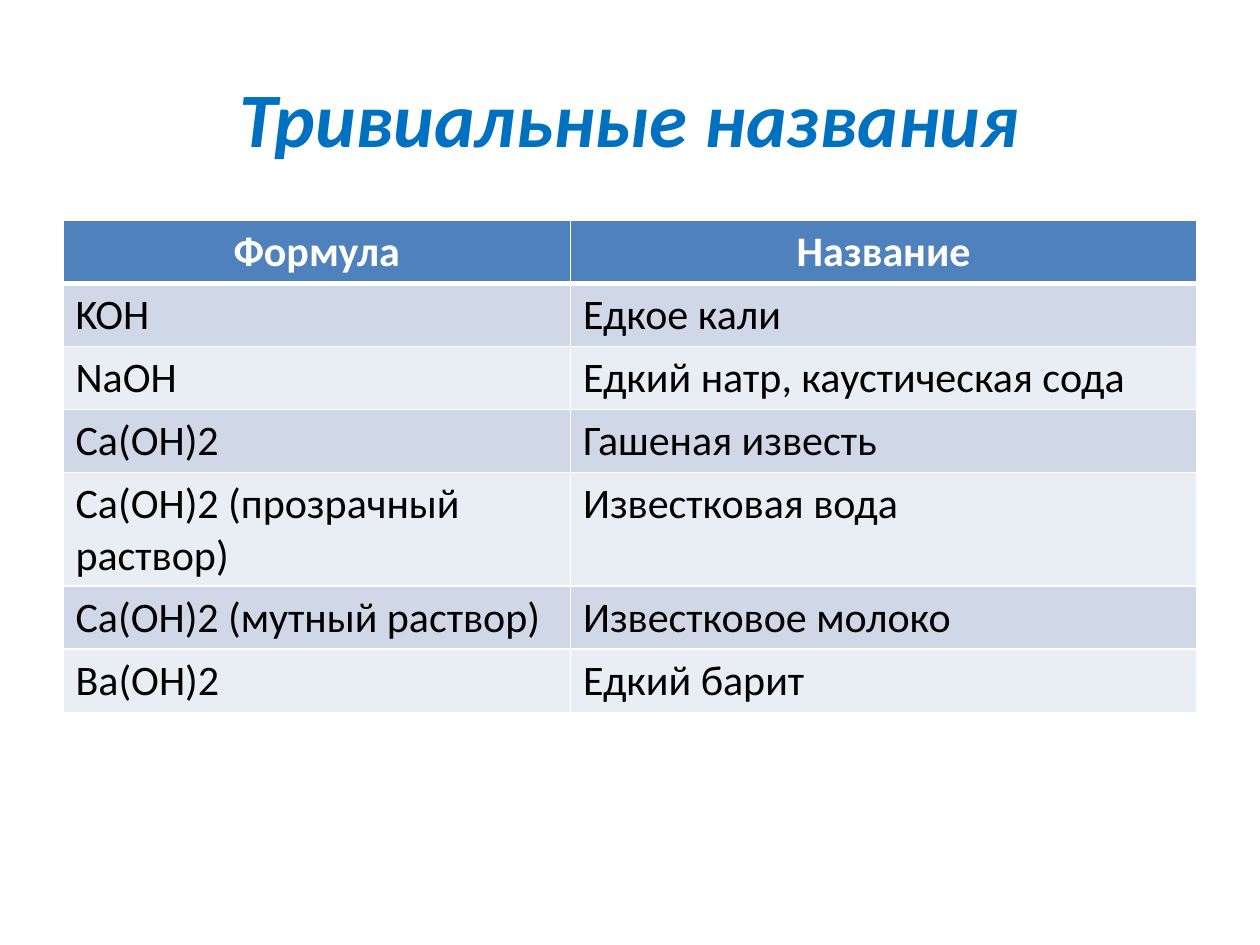
from typing import NamedTuple

from lxml.etree import SubElement
from pptx import Presentation
from pptx.dml.color import RGBColor as RGB
from pptx.enum.text import MSO_ANCHOR as ANCHOR, PP_ALIGN as ALIGN
from pptx.oxml.ns import qn
from pptx.util import Pt

FONT = "Calibri"
COLORS = {
    "title": "0070C0",
    "header": "4F81BD",
    "band_dark": "D0D8E8",
    "band_light": "E9EDF4",
    "text": "000000",
    "white": "FFFFFF",
}


class Compound(NamedTuple):
    formula: str
    name: str


HEADER = Compound("Формула", "Название")
COMPOUNDS = [
    Compound("KOH", "Едкое кали"),
    Compound("NaOH", "Едкий натр, каустическая сода"),
    Compound("Ca(OH)2", "Гашеная известь"),
    Compound("Ca(OH)2 (прозрачный раствор)", "Известковая вода"),
    Compound("Ca(OH)2 (мутный раствор)", "Известковое молоко"),
    Compound("Ba(OH)2", "Едкий барит"),
]
COL_WIDTHS = (290, 358)
ROW_HEIGHT = 29.2


def write(tf, text: str, *, size: float, color: str, bold: bool = False,
          italic: bool = False, align=ALIGN.LEFT) -> None:
    """Put one formatted paragraph into a text frame."""
    p = tf.paragraphs[0]
    p.alignment = align
    r = p.add_run()
    r.text = text
    r.font.name = FONT
    r.font.size = Pt(size)
    r.font.bold = bold
    r.font.italic = italic
    r.font.color.rgb = RGB.from_string(COLORS[color])


def set_borders(cell, top: float, bottom: float) -> None:
    """Draw white borders round a cell; the sides are always 1 pt."""
    tc_pr = cell._tc.get_or_add_tcPr()
    for side, width in (("L", 1), ("R", 1), ("T", top), ("B", bottom)):
        ln = SubElement(tc_pr, qn(f"a:ln{side}"), w=str(Pt(width)))
        fill = SubElement(ln, qn("a:solidFill"))
        SubElement(fill, qn("a:srgbClr"), val=COLORS["white"])


def fill_row(table, row: int, compound: Compound) -> None:
    """Fill and style one table row; row 0 is the header."""
    is_header = row == 0
    band = "header" if is_header else "band_dark" if row % 2 else "band_light"
    for col, text in enumerate(compound):
        cell = table.cell(row, col)
        set_borders(cell, top=3 if row == 1 else 1, bottom=3 if is_header else 1)
        cell.fill.solid()
        cell.fill.fore_color.rgb = RGB.from_string(COLORS[band])
        write(cell.text_frame, text, size=24, bold=is_header,
              color="white" if is_header else "text",
              align=ALIGN.CENTER if is_header else ALIGN.LEFT)


def main() -> None:
    prs = Presentation()
    prs.slide_width, prs.slide_height = Pt(720), Pt(540)
    s = prs.slides.add_slide(prs.slide_layouts[6])

    # Title
    tf = s.shapes.add_textbox(Pt(36), Pt(21.6), Pt(648), Pt(90)).text_frame
    tf.word_wrap = True
    tf.vertical_anchor = ANCHOR.MIDDLE
    write(tf, "Тривиальные названия", size=44, color="title",
          bold=True, italic=True, align=ALIGN.CENTER)

    # Table of formulas and trivial names
    rows = [HEADER, *COMPOUNDS]
    table = s.shapes.add_table(
        len(rows), len(COL_WIDTHS), Pt(36), Pt(126),
        Pt(sum(COL_WIDTHS)), Pt(ROW_HEIGHT * len(rows))).table
    for column, width in zip(table.columns, COL_WIDTHS):
        column.width = Pt(width)
    for i, compound in enumerate(rows):
        table.rows[i].height = Pt(ROW_HEIGHT)
        fill_row(table, i, compound)

    prs.save("out.pptx")


if __name__ == "__main__":
    main()
